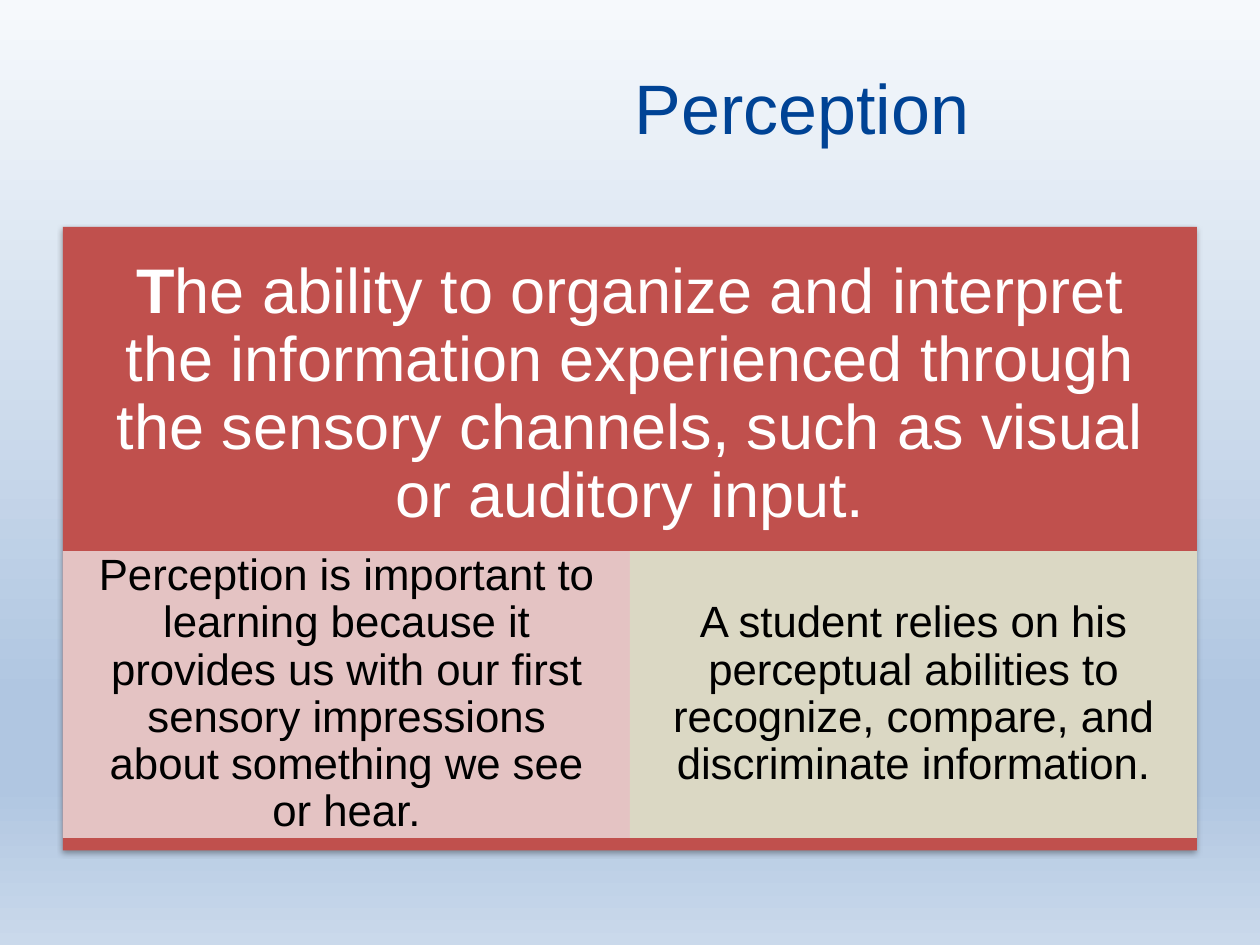
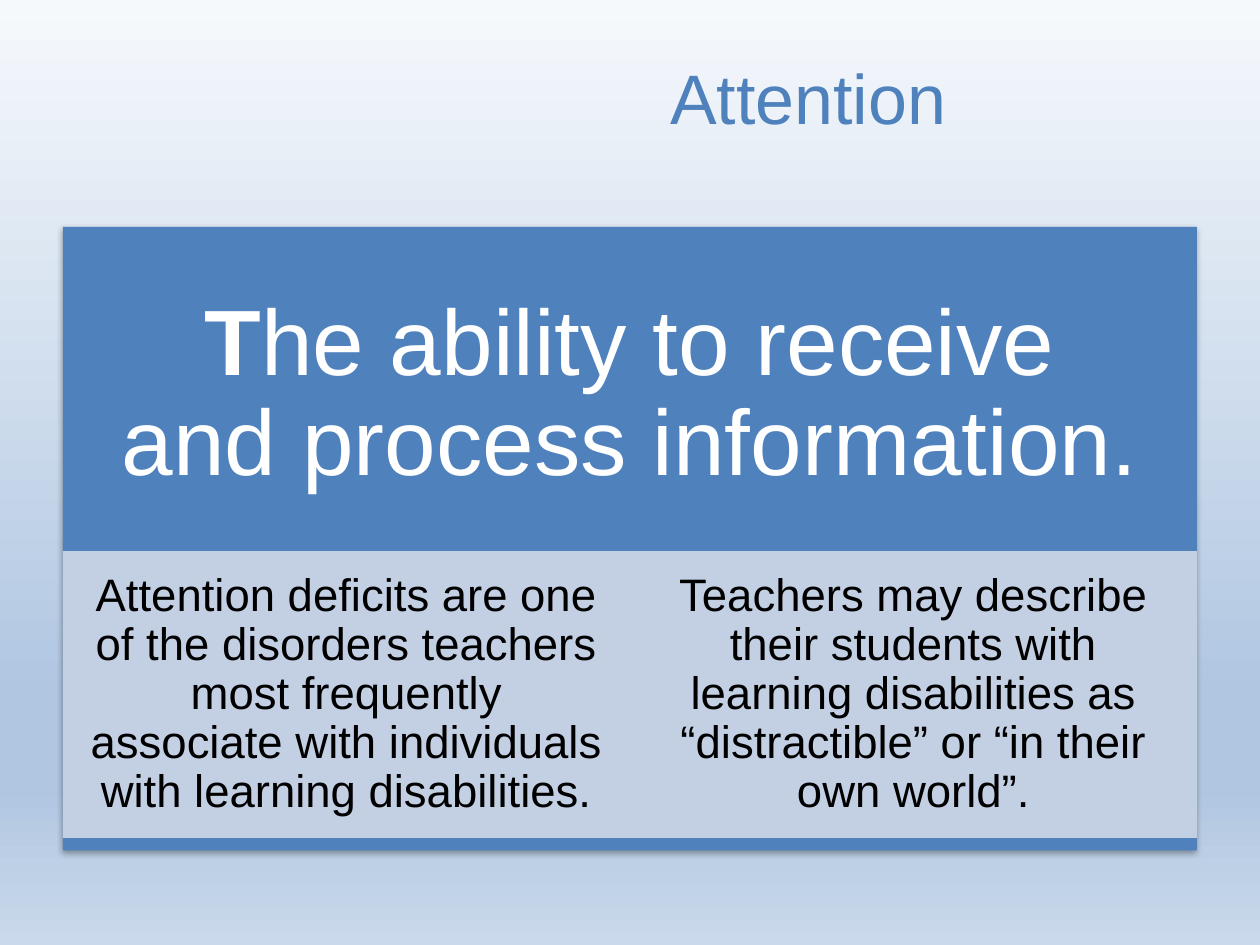
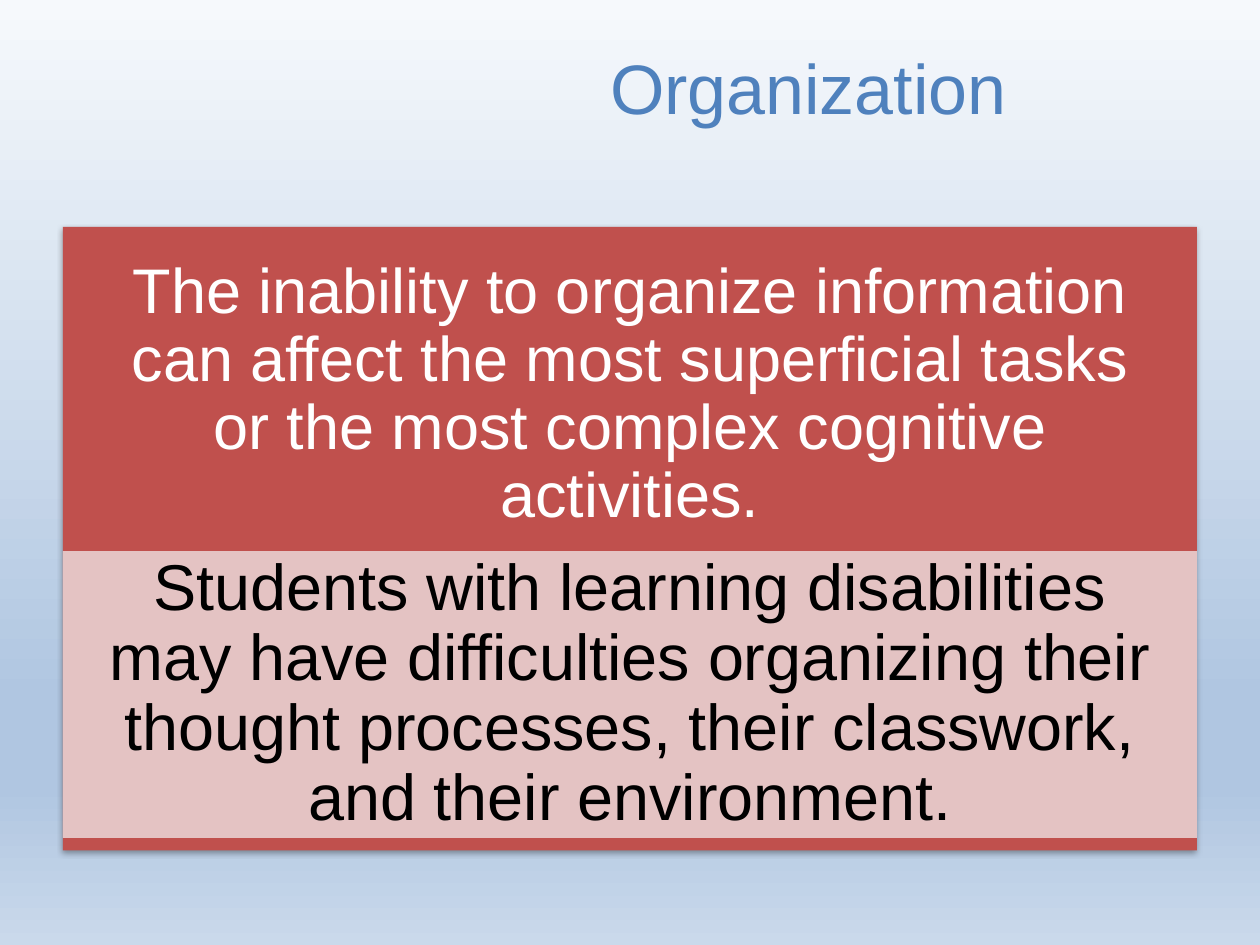
from lxml.etree import SubElement
from pptx import Presentation
from pptx.dml.color import RGBColor
from pptx.enum.shapes import MSO_SHAPE as Preset
from pptx.enum.text import MSO_ANCHOR as Anchor, MSO_AUTO_SIZE as AutoSize, PP_ALIGN as Align
from pptx.oxml.ns import qn
from pptx.util import Inches, Pt

FONT = "Arial"
COLORS = {
    "navy": "004395", "blue": "4F81BD", "red": "C0504D",
    "pale_red": "E8D0D0", "pale_green": "DEE7D1", "pale_blue": "D0D8E8",
    "white": "FFFFFF", "black": "000000",
    "sky_top": "F6F9FC", "sky_deep": "B0C6E1", "sky_bottom": "CAD9EB",
}
SKY_STOPS = [(0, "sky_top"), (74, "sky_deep"), (83, "sky_deep"), (100, "sky_bottom")]

TITLE_SIZE = (6.67, 1.03)
PANEL_BOX = (0.5, 1.8, 9, 4.95)
# Shares of the panel height
HEADING_SHARE, CELL_TOP, CELL_SHARE = 0.54, 0.52, 0.46
# Text insets in ems
WIDE_INSET, SLIM_INSET = 0.56, 0.1

SLIDES = [
    {
        "title": ("Perception", "navy", (3, 0.33), 0.16),
        "panel": "red",
        "heading": (36, [("T", True), (
            "he ability to organize and interpret the information experienced "
            "through the sensory channels, such as visual or auditory input.", False)]),
        "cell_size": 25,
        "cells": [
            ("pale_red", "Perception is important to learning because it provides us "
                         "with our first sensory impressions about something we see or hear."),
            ("pale_green", "A student relies on his perceptual abilities to recognize, "
                           "compare, and discriminate information."),
        ],
    },
    {
        "title": ("Attention", "blue", (3.08, 0.25), 0.1),
        "panel": "blue",
        "heading": (53, [("T", True), ("he ability to receive and process information.", False)]),
        "cell_size": 26,
        "cells": [
            ("pale_blue", "Attention deficits are one of the disorders teachers most "
                          "frequently associate with individuals with learning disabilities."),
            ("pale_blue", "Teachers may describe their students with learning disabilities "
                          "as “distractible” or “in their own world”."),
        ],
    },
    {
        "title": ("Organization", "blue", (3.08, 0.17), 0.1),
        "panel": "red",
        "heading": (36, [(
            "The inability to organize information can affect the most superficial "
            "tasks or the most complex cognitive activities.", False)]),
        "cell_size": 37,
        "cells": [
            ("pale_red", "Students with learning disabilities may have difficulties "
                         "organizing their thought processes, their classwork, "
                         "and their environment."),
        ],
    },
]


def rgb(name):
    return RGBColor.from_string(COLORS[name])


def add_color(parent, name, alpha=None):
    color = SubElement(parent, qn("a:srgbClr"), val=COLORS[name])
    if alpha is not None:
        SubElement(color, qn("a:alpha"), val=str(alpha * 1000))


def paint_background(master):
    fill = master.background.fill
    fill.gradient()
    fill.gradient_angle = 270
    stops = master.element.find(".//" + qn("a:gsLst"))
    stops.clear()
    for percent, name in SKY_STOPS:
        add_color(SubElement(stops, qn("a:gs"), pos=str(percent * 1000)), name)


def write(frame, runs, size, color, line_spacing=None):
    frame.word_wrap = True
    frame.vertical_anchor = Anchor.MIDDLE
    para = frame.paragraphs[0]
    para.alignment = Align.CENTER
    para.line_spacing = line_spacing
    for text, bold in runs:
        span = para.add_run()
        span.text = text
        span.font.name = FONT
        span.font.size = Pt(size)
        span.font.bold = bold
        span.font.color.rgb = rgb(color)


def set_insets(frame, size, across, down):
    frame.margin_left = frame.margin_right = Pt(size * across)
    frame.margin_top = frame.margin_bottom = Pt(size * down)


def add_block(shapes, box, color):
    block = shapes.add_shape(Preset.RECTANGLE, *map(Inches, box))
    block.shadow.inherit = False
    block.fill.solid()
    block.fill.fore_color.rgb = rgb(color)
    block.line.fill.background()
    return block


def add_title(page, text, color, corner, left_inset):
    title = page.shapes.title
    title.left, title.top = map(Inches, corner)
    title.width, title.height = map(Inches, TITLE_SIZE)
    frame = title.text_frame
    frame.auto_size = AutoSize.NONE
    frame.margin_left = Inches(left_inset)
    write(frame, [(text, False)], 40, color)


def add_panel(page, box, content):
    left, top, width, height = box
    shapes = page.shapes.add_group_shape().shapes

    # Backdrop with a soft shadow below
    backdrop = add_block(shapes, box, content["panel"])
    effects = backdrop.element.spPr.find(qn("a:effectLst"))
    shadow = SubElement(effects, qn("a:outerShdw"), blurRad=str(Pt(3.1)),
                        dist=str(Pt(1.8)), dir="5400000", rotWithShape="0")
    add_color(shadow, "black", 35)

    # Definition
    size, runs = content["heading"]
    heading = shapes.add_textbox(*map(Inches, (left, top, width, height * HEADING_SHARE)))
    set_insets(heading.text_frame, size, WIDE_INSET, WIDE_INSET)
    write(heading.text_frame, runs, size, "white", 0.9)

    # Equal cells along the foot
    size = content["cell_size"]
    cell_width = width / len(content["cells"])
    for column, (color, text) in enumerate(content["cells"]):
        cell = add_block(shapes, (left + column * cell_width, top + height * CELL_TOP,
                                  cell_width, height * CELL_SHARE), color)
        tint = cell.element.spPr.find(qn("a:solidFill"))
        tint.clear()
        add_color(tint, color, 90)
        set_insets(cell.text_frame, size, WIDE_INSET, SLIM_INSET)
        write(cell.text_frame, [(text, False)], size, "black", 0.9)


def main():
    deck = Presentation()
    deck.slide_width, deck.slide_height = Inches(10), Inches(7.5)
    paint_background(deck.slide_master)
    title_only = deck.slide_layouts.get_by_name("Title Only")
    for content in SLIDES:
        page = deck.slides.add_slide(title_only)
        add_title(page, *content["title"])
        add_panel(page, PANEL_BOX, content)
    deck.save("out.pptx")


if __name__ == "__main__":
    main()
